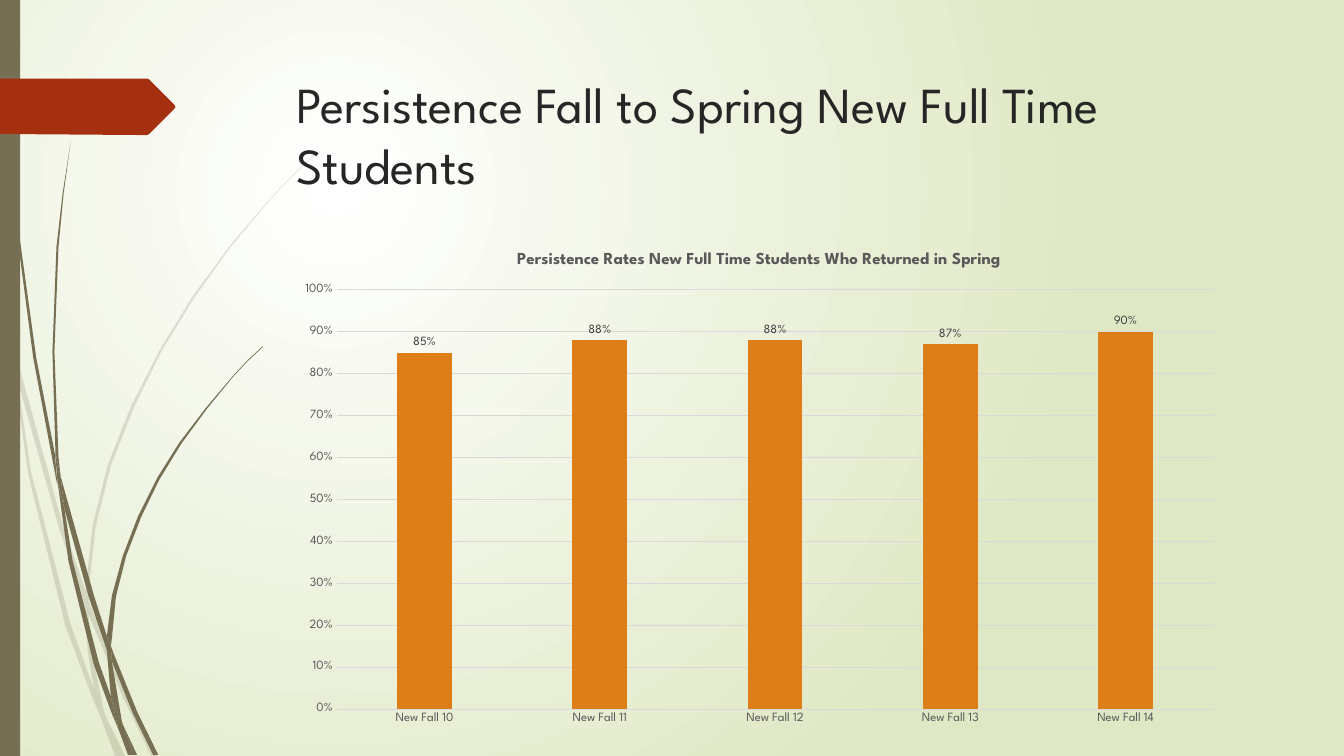
import dataclasses

import lxml.etree
import pptx
import pptx.chart.data
import pptx.dml.color
import pptx.enum.chart
import pptx.enum.shapes
import pptx.enum.text
import pptx.oxml.ns
import pptx.util

Inches = pptx.util.Inches
qn = pptx.oxml.ns.qn


@dataclasses.dataclass(frozen=True)
class Theme:
    font: str = "League Spartan"
    white: str = "FFFFFF"
    green: str = "DFE8C4"
    brown: str = "766F54"
    red: str = "A53010"
    orange: str = "DE7E18"
    ink: str = "262626"
    label: str = "404040"
    gray: str = "595959"
    grid: str = "D9D9D9"
    head: int = 36
    title: int = 12
    small: int = 9


# Each blade is an outline of (x, y) points in inches.
PALE = [
    [(0.11, 3.5), (0.09, 3.22), (0, 2.82), (0, 2.99), (0.1, 3.44)],
    [(0.58, 5.22), (0.84, 5.99), (0.85, 5.86), (0.62, 5.2), (0.14, 3.45), (0.17, 3.76)],
    [(0.92, 6.07), (0.88, 5.96), (0.88, 6.1), (1.23, 6.94), (1.5, 7.5), (1.55, 7.5),
     (1.27, 6.92)],
    [(1.19, 7.5), (1.24, 7.5), (1.05, 7.11)],
    [(0.93, 6.83), (0.7, 6.19), (0.31, 4.69), (0.17, 3.76), (0.11, 3.5), (0.28, 4.7),
     (0.65, 6.21), (0.92, 6.93), (1.01, 7.14), (0.99, 7.07)],
    [(0.84, 5.99), (0.87, 6.46), (0.93, 6.83), (0.96, 6.92), (1.05, 7.11), (1.03, 7.06),
     (0.91, 6.46), (0.88, 6.1), (0.88, 6.08)],
    [(0.88, 5.84), (0.95, 5.22), (1.1, 4.62), (1.33, 4.04), (1.6, 3.49), (1.93, 2.95),
     (2.29, 2.45), (2.68, 1.98), (2.9, 1.75), (3.12, 1.54), (3.12, 1.53), (2.89, 1.75),
     (2.68, 1.97), (2.28, 2.44), (1.91, 2.94), (1.58, 3.48), (1.3, 4.03), (1.07, 4.61),
     (0.92, 5.21), (0.85, 5.84), (0.85, 5.86), (0.88, 5.96)],
    [(1.01, 7.14), (1.14, 7.5), (1.19, 7.5)],
    [(0.88, 6.08), (0.88, 6.1), (0.88, 5.96), (0.85, 5.86), (0.84, 5.99)],
    [(0.96, 6.92), (0.93, 6.83), (0.99, 7.07), (1.01, 7.14), (1.19, 7.5), (1.05, 7.11)],
]
DARK = [
    [(0.07, 1.1), (0.17, 2.33), (0.33, 3.55), (0.56, 4.77), (0.57, 4.81), (0.55, 4.57),
     (0.55, 4.53), (0.36, 3.55), (0.19, 2.32), (0.08, 1.09), (0.05, 0.48), (0.04, 0),
     (0.03, 0), (0.04, 0.48)],
    [(0.88, 5.92), (1.06, 6.45), (1.06, 6.31), (0.93, 5.9), (0.6, 4.72), (0.64, 5.05)],
    [(1.13, 6.49), (1.1, 6.41), (1.11, 6.56), (1.32, 7.08), (1.52, 7.49), (1.57, 7.49),
     (1.36, 7.06)],
    [(1.1, 6.91), (0.98, 6.57), (0.72, 5.56), (0.64, 5.05), (0.57, 4.77), (0.68, 5.57),
     (0.93, 6.59), (1.11, 7.08), (1.17, 7.22), (1.16, 7.17)],
    [(0.6, 4.72), (0.58, 4.53), (0.54, 3.49), (0.58, 2.45), (0.63, 1.93), (0.7, 1.41),
     (0.62, 1.93), (0.56, 2.45), (0.52, 3.49), (0.55, 4.49)],
    [(1.33, 7.49), (1.36, 7.49), (1.22, 7.19)],
    [(0.57, 4.77), (0.64, 5.05), (0.6, 4.72), (0.55, 4.49), (0.55, 4.53)],
    [(1.11, 6.33), (1.15, 5.92), (1.25, 5.52), (1.4, 5.13), (1.58, 4.76), (1.8, 4.4),
     (2.05, 4.06), (2.31, 3.74), (2.45, 3.59), (2.61, 3.44), (2.6, 3.44), (2.45, 3.58),
     (2.31, 3.73), (2.04, 4.05), (1.78, 4.39), (1.56, 4.74), (1.37, 5.12), (1.22, 5.51),
     (1.11, 5.91), (1.06, 6.31), (1.1, 6.41)],
    [(1.17, 7.22), (1.27, 7.49), (1.31, 7.49)],
    [(1.06, 6.45), (1.1, 6.91), (1.16, 7.06), (1.22, 7.19), (1.21, 7.16), (1.11, 6.56),
     (1.09, 6.51)],
    [(1.06, 6.45), (1.09, 6.51), (1.11, 6.56), (1.1, 6.41), (1.06, 6.31)],
    [(1.16, 7.06), (1.1, 6.91), (1.16, 7.17), (1.17, 7.22), (1.3, 7.49), (1.33, 7.49),
     (1.22, 7.19)],
]
TAG = [(0, 0.78), (1.46, 0.78), (1.48, 0.79), (1.73, 1.04), (1.74, 1.06), (1.73, 1.08),
       (1.48, 1.33), (1.46, 1.34), (1.36, 1.34), (0, 1.33)]
RATES = {"New Fall 10": 0.85, "New Fall 11": 0.88, "New Fall 12": 0.88,
         "New Fall 13": 0.87, "New Fall 14": 0.9}


def tint(color):
    return pptx.dml.color.RGBColor.from_string(color)


class Page:
    def __init__(self, deck, theme):
        self.theme = theme
        self.slide = deck.slides.add_slide(deck.slide_layouts[6])
        self.shapes = self.slide.shapes

    def style(self, font, size, color, bold=False):
        font.name, font.size, font.bold = self.theme.font, pptx.util.Pt(size), bold
        font.color.rgb = tint(color)

    def paint(self, shape, color, alpha=None):
        shape.shadow.inherit = False
        shape.line.fill.background()
        shape.fill.solid()
        shape.fill.fore_color.rgb = tint(color)
        if alpha:
            dye = shape._element.spPr.find(".//" + qn("a:srgbClr"))
            lxml.etree.SubElement(dye, qn("a:alpha"), val=str(alpha * 1000))

    def glow(self, inner, outer):
        """Fill the background with a round gradient centred at the upper left."""
        fill = self.slide.background.fill
        fill.gradient()
        for stop, color, place in zip(fill.gradient_stops, (inner, outer), (0, 1)):
            stop.color.rgb, stop.position = tint(color), place
        grad = self.slide.element.find(".//" + qn("a:gradFill"))
        line = grad.find(qn("a:lin"))
        ring = lxml.etree.Element(qn("a:path"), {"path": "circle"})
        lxml.etree.SubElement(ring, qn("a:fillToRect"),
                              l="50000", t="50000", r="100000", b="100000")
        grad.replace(line, ring)

    def outline(self, points, color, alpha=None, shapes=None):
        """Draw a closed outline, inside a group when its shapes are given."""
        start, *rest = [(Inches(x), Inches(y)) for x, y in points]
        pen = (shapes or self.shapes).build_freeform(*start)
        pen.add_line_segments(rest, close=True)
        self.paint(pen.convert_to_shape(), color, alpha)

    def grass(self, blades, color, alpha=None):
        group = self.shapes.add_group_shape()
        for blade in blades:
            self.outline(blade, color, alpha, group.shapes)

    def bar(self, box, color):
        kind = pptx.enum.shapes.MSO_SHAPE.RECTANGLE
        self.paint(self.shapes.add_shape(kind, *map(Inches, box)), color)

    def text(self, box, words, size, color):
        frame = self.shapes.add_textbox(*map(Inches, box)).text_frame
        frame.word_wrap = True
        frame.vertical_anchor = pptx.enum.text.MSO_ANCHOR.TOP
        run = frame.paragraphs[0].add_run()
        run.text = words
        self.style(run.font, size, color)

    def chart(self, box, title, rates):
        theme, enum = self.theme, pptx.enum.chart
        data = pptx.chart.data.CategoryChartData(number_format="0%")
        data.categories = list(rates)
        data.add_series("Series 1", list(rates.values()))
        kind = enum.XL_CHART_TYPE.COLUMN_CLUSTERED
        chart = self.shapes.add_chart(kind, *map(Inches, box), data).chart
        self.style(chart.font, theme.small, theme.gray)
        chart.has_legend = False
        chart.has_title = True
        run = chart.chart_title.text_frame.paragraphs[0].add_run()
        run.text = title
        self.style(run.font, theme.title, theme.gray, bold=True)

        cats, vals = chart.category_axis, chart.value_axis
        for axis in (cats, vals):
            axis.major_tick_mark = axis.minor_tick_mark = enum.XL_TICK_MARK.NONE
            self.style(axis.tick_labels.font, theme.small, theme.gray)
        vals.minimum_scale, vals.maximum_scale, vals.major_unit = 0, 1, 0.1
        vals.tick_labels.number_format = "0%"
        vals.tick_labels.number_format_is_linked = False
        vals.format.line.fill.background()
        for line in (cats.format.line, vals.major_gridlines.format.line):
            line.color.rgb, line.width = tint(theme.grid), pptx.util.Pt(0.75)

        plot = chart.plots[0]
        plot.gap_width, plot.overlap, plot.vary_by_categories = 219, -27, False
        bars = plot.series[0]
        bars.format.fill.solid()
        bars.format.fill.fore_color.rgb = tint(theme.orange)
        labels = bars.data_labels
        labels.show_value = True
        labels.number_format, labels.number_format_is_linked = "0%", False
        labels.position = enum.XL_LABEL_POSITION.OUTSIDE_END
        self.style(labels.font, theme.small, theme.label)


def main():
    deck = pptx.Presentation()
    deck.slide_width, deck.slide_height = Inches(13.33), Inches(7.5)
    theme = Theme()
    page = Page(deck, theme)
    page.glow(theme.white, theme.green)
    page.grass(PALE, theme.brown, alpha=20)
    page.grass(DARK, theme.brown)
    page.bar((0, 0, 0.2, 7.5), theme.brown)
    page.outline(TAG, theme.red)
    page.text((2.84, 0.68, 9.75, 1.4), "Persistence Fall to Spring New Full Time Students",
              theme.head, theme.ink)
    page.chart((2.84, 2.31, 9.38, 4.98),
               "Persistence Rates New Full Time Students Who Returned in Spring", RATES)
    deck.save("out.pptx")


if __name__ == "__main__":
    main()
